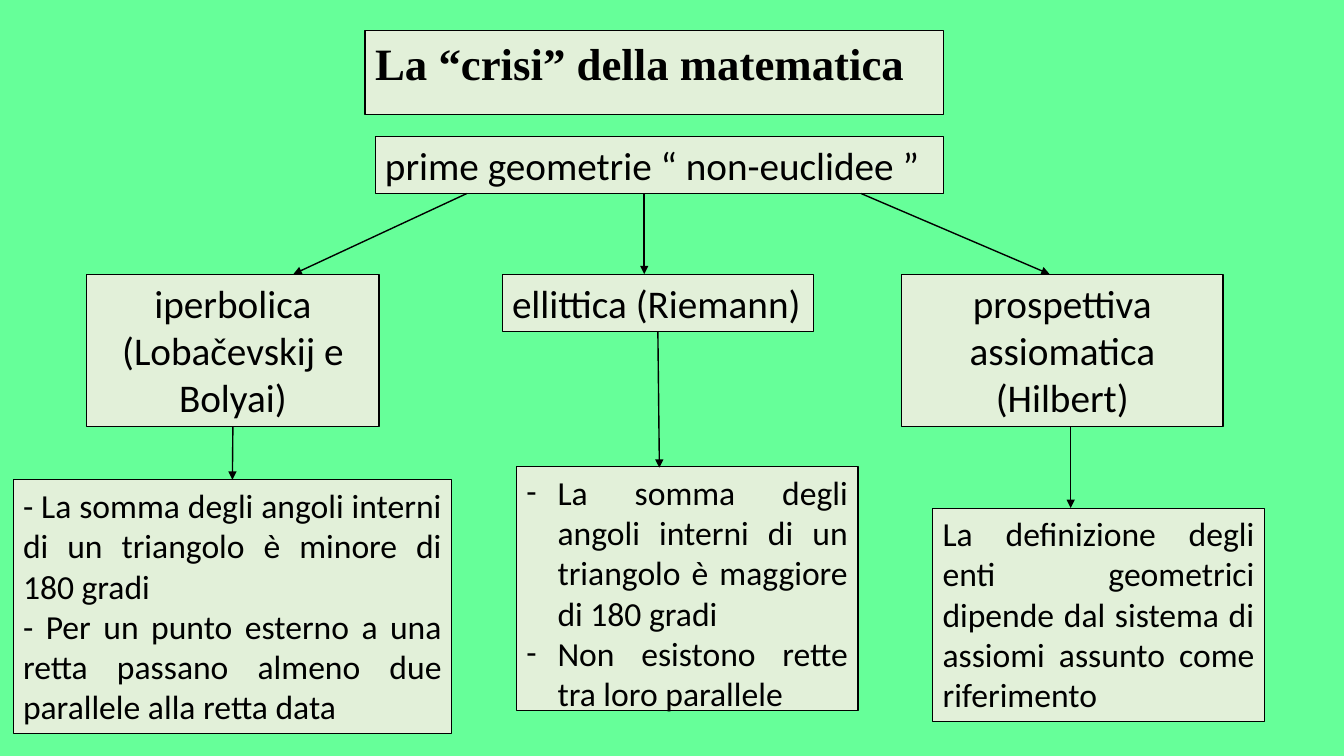
"""Build a concept map slide about the crisis of mathematics."""
from lxml import etree
from pptx import Presentation
from pptx.dml.color import RGBColor
from pptx.enum.shapes import MSO_CONNECTOR, MSO_SHAPE
from pptx.enum.text import MSO_ANCHOR, MSO_AUTO_SIZE, PP_ALIGN
from pptx.oxml.ns import qn
from pptx.util import Inches, Pt

GREEN = RGBColor(0x66, 0xFF, 0x99)
PALE = RGBColor(0xE2, 0xF0, 0xD9)
BLACK = RGBColor(0, 0, 0)


def fill_box(box, place, texts, size=28, align=PP_ALIGN.LEFT, font="Calibri", bold=False, bullet=None):
    """Place a box and write its formatted paragraphs."""
    box.left, box.top, box.width, box.height = [Inches(length) for length in place]
    box.fill.solid()
    box.fill.fore_color.rgb = PALE
    box.line.color.rgb = BLACK
    box.line.width = Pt(0.75)
    frame = box.text_frame
    frame.word_wrap = True
    frame.auto_size = MSO_AUTO_SIZE.SHAPE_TO_FIT_TEXT
    frame.vertical_anchor = MSO_ANCHOR.TOP
    for index, text in enumerate(texts):
        para = frame.add_paragraph() if index else frame.paragraphs[0]
        para.alignment = align
        para.space_before = Pt(0)
        span = para.add_run()
        span.text = text
        span.font.name = font
        span.font.size = Pt(size)
        span.font.bold = bold
        span.font.color.rgb = BLACK
        if bullet:
            props = para._p.get_or_add_pPr()
            props.set("marL", str(Inches(0.31)))
            props.set("indent", str(Inches(-0.31)))
            etree.SubElement(props, qn("a:buFont")).set("typeface", font)
            etree.SubElement(props, qn("a:buChar")).set("char", bullet)


deck = Presentation()
deck.slide_width, deck.slide_height = Inches(13.33), Inches(7.5)
page = deck.slides.add_slide(deck.slide_layouts[1])
page.background.fill.solid()
page.background.fill.fore_color.rgb = GREEN

fill_box(page.shapes.title, (3.62, 0.3, 5.74, 0.64), ["La “crisi” della matematica"],
         size=32, font="Times New Roman", bold=True)
fill_box(page.placeholders[1], (5.12, 4.63, 3.39, 2.52),
         ["La somma degli angoli interni di un triangolo è maggiore di 180 gradi",
          "Non esistono rette tra loro parallele"],
         size=24, align=PP_ALIGN.JUSTIFY, bullet="-")

LEFT, CENTER, JUSTIFY = PP_ALIGN.LEFT, PP_ALIGN.CENTER, PP_ALIGN.JUSTIFY
concepts = {
    "geometrie": ((3.72, 1.35, 5.64, 0.57), 28, LEFT, ["prime geometrie “ non-euclidee ”"]),
    "iperbolica": ((0.86, 2.72, 2.9, 1.51), 28, CENTER, ["iperbolica (Lobačevskij e Bolyai)"]),
    "ellittica": ((4.98, 2.72, 3.09, 0.57), 28, LEFT, ["ellittica (Riemann)"]),
    "prospettiva": ((8.94, 2.72, 3.19, 1.51), 28, CENTER, ["prospettiva assiomatica (Hilbert)"]),
    "somma": ((0.13, 4.76, 4.35, 2.52), 24, JUSTIFY,
              ["- La somma degli angoli interni di un triangolo è minore di 180 gradi",
               "- Per un punto esterno a una retta passano almeno due parallele alla retta data"]),
    "definizione": ((9.25, 5.04, 3.29, 2.12), 24, JUSTIFY,
                    ["La definizione degli enti geometrici dipende dal sistema di assiomi "
                     "assunto come riferimento"]),
}
boxes = {}
for name, (place, size, align, texts) in concepts.items():
    boxes[name] = page.shapes.add_shape(MSO_SHAPE.RECTANGLE, 0, 0, 0, 0)
    boxes[name].shadow.inherit = False
    fill_box(boxes[name], place, texts, size=size, align=align)

arrows = [
    ((4.63, 1.92), (2.91, 2.72), 1, None, None),
    ((6.39, 1.92), (6.39, 2.72), 1.5, None, None),
    ((8.54, 1.92), (10.41, 2.72), 1, None, None),
    ((2.3, 4.24), (2.3, 4.76), 1, "iperbolica", "somma"),
    ((6.52, 3.3), (6.54, 4.64), 1, "ellittica", None),
    ((10.62, 4.24), (10.62, 5.04), 1, None, None),
]
for start, end, width, source, target in arrows:
    points = [Inches(length) for length in start + end]
    arrow = page.shapes.add_connector(MSO_CONNECTOR.STRAIGHT, *points)
    if source:
        arrow.begin_connect(boxes[source], 2)
    if target:
        arrow.end_connect(boxes[target], 0)
    arrow.line.color.rgb = BLACK
    arrow.line.width = Pt(width)
    etree.SubElement(arrow.line._get_or_add_ln(), qn("a:tailEnd")).set("type", "triangle")
    etree.SubElement(arrow._element.spPr, qn("a:effectLst"))

deck.save("out.pptx")
